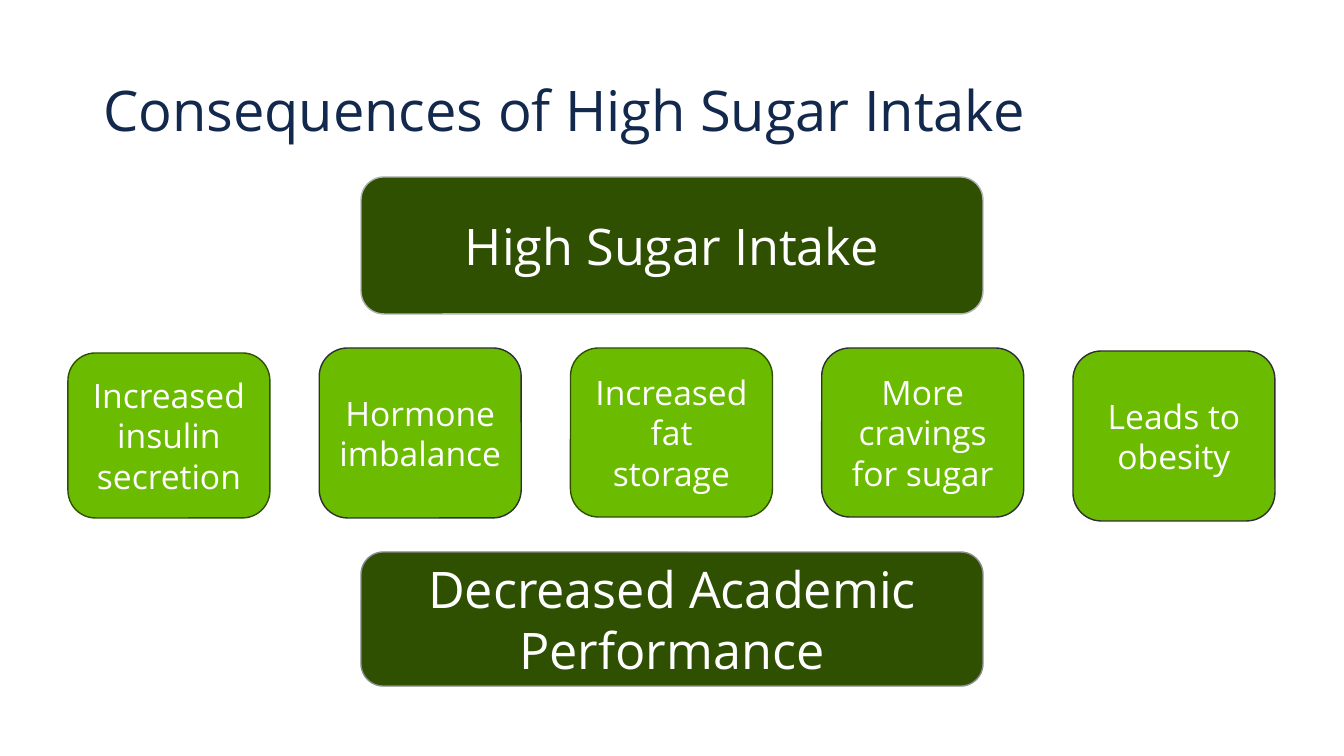
from pptx import Presentation
from pptx.dml.color import RGBColor
from pptx.enum.shapes import MSO_SHAPE
from pptx.enum.text import MSO_ANCHOR, MSO_AUTO_SIZE, PP_ALIGN
from pptx.util import Emu, Pt

PX = 12192000 / 1344
FONT = "Open Sans"
COLORS = {
    "navy": "12284C",
    "white": "FFFFFF",
    "dark_green": "2E5000",
    "green": "6BBC00",
    "silver": "B0B2B6",
    "gray": "888C91",
    "charcoal": "2E3032",
}
EFFECTS = [
    ("Increased insulin secretion", 5, 165, "dark_green"),
    ("Hormone imbalance", 0, 170, "charcoal"),
    ("Increased fat storage", 0, 169, "dark_green"),
    ("More cravings for sugar", 0, 169, "charcoal"),
    ("Leads to obesity", 3, 170, "charcoal"),
]


def px(n):
    return Emu(round(n * PX))


def rgb(name):
    return RGBColor.from_string(COLORS[name])


def set_text(sp, text, size, color, align):
    tf = sp.text_frame
    tf.text = text
    tf.word_wrap = True
    tf.auto_size = MSO_AUTO_SIZE.NONE
    tf.vertical_anchor = MSO_ANCHOR.MIDDLE
    p = tf.paragraphs[0]
    p.alignment = align
    p.font.name = FONT
    p.font.size = Pt(size)
    p.font.color.rgb = rgb(color)
    return p


def add_title(s, text, x, y, w, h):
    sp = s.shapes.title
    sp.left, sp.top, sp.width, sp.height = px(x), px(y), px(w), px(h)
    p = set_text(sp, text, 40, "navy", PP_ALIGN.LEFT)
    p.line_spacing = 0.9


def add_box(s, text, x, y, w, h, fill, line, size):
    sp = s.shapes.add_shape(MSO_SHAPE.ROUNDED_RECTANGLE, px(x), px(y), px(w), px(h))
    sp.shadow.inherit = False
    sp.fill.solid()
    sp.fill.fore_color.rgb = rgb(fill)
    sp.line.color.rgb = rgb(line)
    sp.line.width = Pt(1)
    set_text(sp, text, size, "white", PP_ALIGN.CENTER)


def add_effects(s, x, y, w):
    box_w = 202
    step = (w - box_w) / (len(EFFECTS) - 1)
    for i, (text, dy, h, line) in enumerate(EFFECTS):
        add_box(s, text, x + i * step, y + dy, box_w, h, "green", line, 24)


def main():
    prs = Presentation()
    prs.slide_width, prs.slide_height = px(1344), px(756)
    s = prs.slides.add_slide(prs.slide_layouts[5])
    add_title(s, "Consequences of High Sugar Intake", 93, 40, 1159, 146)
    add_box(s, "High Sugar Intake", 361, 177, 622, 137, "dark_green", "silver", 36)
    add_effects(s, 68, 348, 1207)
    add_box(s, "Decreased Academic Performance", 361, 552, 622, 134, "dark_green", "gray", 36)
    prs.save("out.pptx")


if __name__ == "__main__":
    main()
